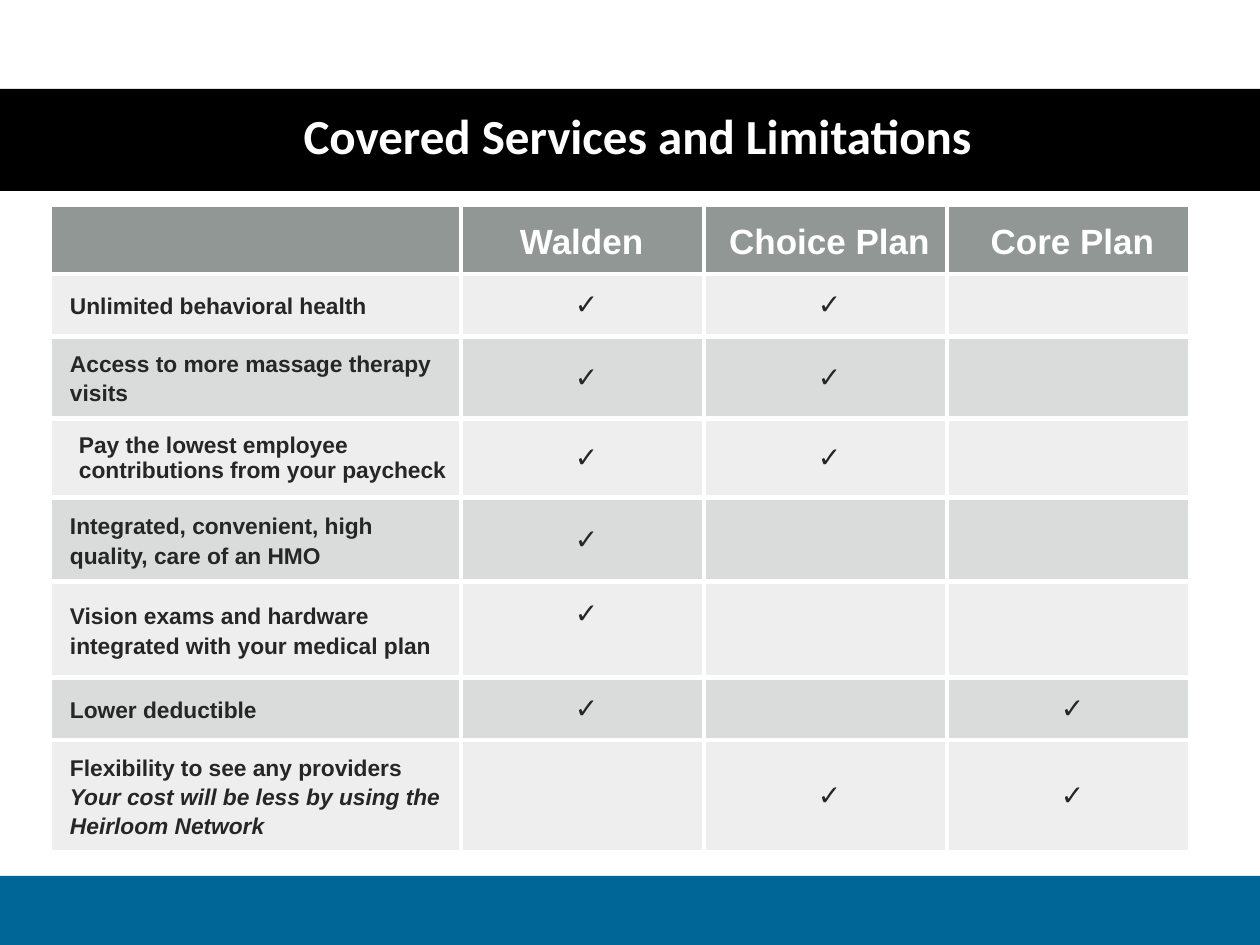
from lxml.etree import SubElement
from pptx import Presentation
from pptx.dml.color import RGBColor
from pptx.enum.shapes import MSO_SHAPE
from pptx.enum.text import MSO_ANCHOR, MSO_AUTO_SIZE, PP_ALIGN
from pptx.oxml.ns import qn
from pptx.util import Pt

SCALE = 914400 / 126
CHECK = "✓"
COLUMNS = [411, 243, 243, 243]
HEADINGS = ["", "Walden ", "Choice Plan", "Core Plan"]
SERVICES = [
    (59, ["Unlimited behavioral health"], (1, 2)),
    (82, ["Access to more massage therapy visits"], (1, 2)),
    (79, ["Pay the lowest employee contributions from your paycheck"], (1, 2)),
    (84, ["Integrated, convenient, high quality, care of an HMO"], (1,)),
    (96, ["Vision exams and hardware integrated with your medical plan"], (1,)),
    (60, ["Lower deductible"], (1, 3)),
    (112, ["Flexibility to see any providers ",
           "Your cost will be less by using the Heirloom Network"], (2, 3)),
]
INDENTED_ROW = 3
RAISED_ROW = 5

HEADING = {"size": Pt(20), "bold": True, "name": "Arial"}
SERVICE = {"size": Pt(13), "bold": True, "name": "Arial"}
MARK = {"size": Pt(16), "bold": True, "name": "Arial"}
TITLE = {"size": Pt(28), "bold": True, "name": "Calibri"}


def px(length):
    return round(length * SCALE)


def paint(target, color):
    target.rgb = RGBColor.from_string(color)


def set_values(target, values):
    for name, value in values.items():
        setattr(target, name, value)


def write(para, text, font, color):
    span = para.add_run()
    span.text = text
    set_values(span.font, font)
    paint(span.font.color, color)
    return span


def add_band(page, box, color):
    band = page.shapes.add_shape(MSO_SHAPE.RECTANGLE, *map(px, box))
    band.shadow.inherit = False
    band.fill.solid()
    paint(band.fill.fore_color, color)
    band.line.fill.background()


def add_title(page, box, text):
    left, top, width, height = box
    add_band(page, box, "000000")
    title = page.shapes.title
    title.element.getparent().append(title.element)
    set_values(title, {"left": px(left + 58), "top": px(top - 1),
                       "width": px(width - 101), "height": px(height)})
    set_values(title.text_frame, {"vertical_anchor": MSO_ANCHOR.MIDDLE,
                                  "word_wrap": True,
                                  "auto_size": MSO_AUTO_SIZE.NONE})
    para = title.text_frame.paragraphs[0]
    set_values(para, {"alignment": PP_ALIGN.CENTER, "line_spacing": 0.9})
    write(para, text, TITLE, "FFFFFF")


def style_cell(cell, color, opacity):
    properties = cell._tc.get_or_add_tcPr()
    for side in ("lnL", "lnR", "lnT", "lnB"):
        border = SubElement(properties, qn(f"a:{side}"), w=str(Pt(3)))
        fill = SubElement(border, qn("a:solidFill"))
        SubElement(fill, qn("a:srgbClr"), val="FFFFFF")
    cell.fill.solid()
    paint(cell.fill.fore_color, color)
    tint = properties.find(qn("a:solidFill")).find(qn("a:srgbClr"))
    SubElement(tint, qn("a:alpha"), val=str(opacity * 1000))
    set_values(cell, {"vertical_anchor": MSO_ANCHOR.MIDDLE,
                      "margin_left": px(20), "margin_right": px(12),
                      "margin_top": px(12), "margin_bottom": px(12)})


def fill_service_row(table, row, texts, plans):
    for column in range(len(COLUMNS)):
        style_cell(table.cell(row, column), "878E8B", 15 if row % 2 else 30)
    para = table.cell(row, 0).text_frame.paragraphs[0]
    if row == INDENTED_ROW:
        para._p.get_or_add_pPr().set("marL", str(px(9)))
    else:
        para.line_spacing = 1.15
    for position, text in enumerate(texts):
        span = write(para, text, SERVICE, "262626")
        if position:
            span.font.italic = True
    for column in plans:
        cell = table.cell(row, column)
        para = cell.text_frame.paragraphs[0]
        para.alignment = PP_ALIGN.CENTER
        write(para, CHECK, MARK, "262626")
        if row == RAISED_ROW:
            cell.margin_bottom = px(44)


def add_plan_table(page, box):
    frame = page.shapes.add_table(len(SERVICES) + 1, len(COLUMNS), *map(px, box))
    table = frame.table
    set_values(table, {"first_row": False, "horz_banding": False})
    for column, width in zip(table.columns, COLUMNS):
        column.width = px(width)
    heights = [69] + [height for height, _, _ in SERVICES]
    for row, height in zip(table.rows, heights):
        row.height = px(height)
    for column, heading in enumerate(HEADINGS):
        cell = table.cell(0, column)
        style_cell(cell, "636B68", 70)
        if heading:
            para = cell.text_frame.paragraphs[0]
            set_values(para, {"alignment": PP_ALIGN.CENTER, "line_spacing": 1.15})
            write(para, heading, HEADING, "FFFFFF")
    for row, (_, texts, plans) in enumerate(SERVICES, start=1):
        fill_service_row(table, row, texts, plans)


def main():
    deck = Presentation()
    set_values(deck, {"slide_width": px(1260), "slide_height": px(945)})
    page = deck.slides.add_slide(deck.slide_layouts[5])
    add_band(page, (0, 876, 1260, 69), "006597")
    add_title(page, (0, 89, 1260, 102), "Covered Services and Limitations")
    add_plan_table(page, (50, 205, sum(COLUMNS), 641))
    deck.save("out.pptx")


if __name__ == "__main__":
    main()
